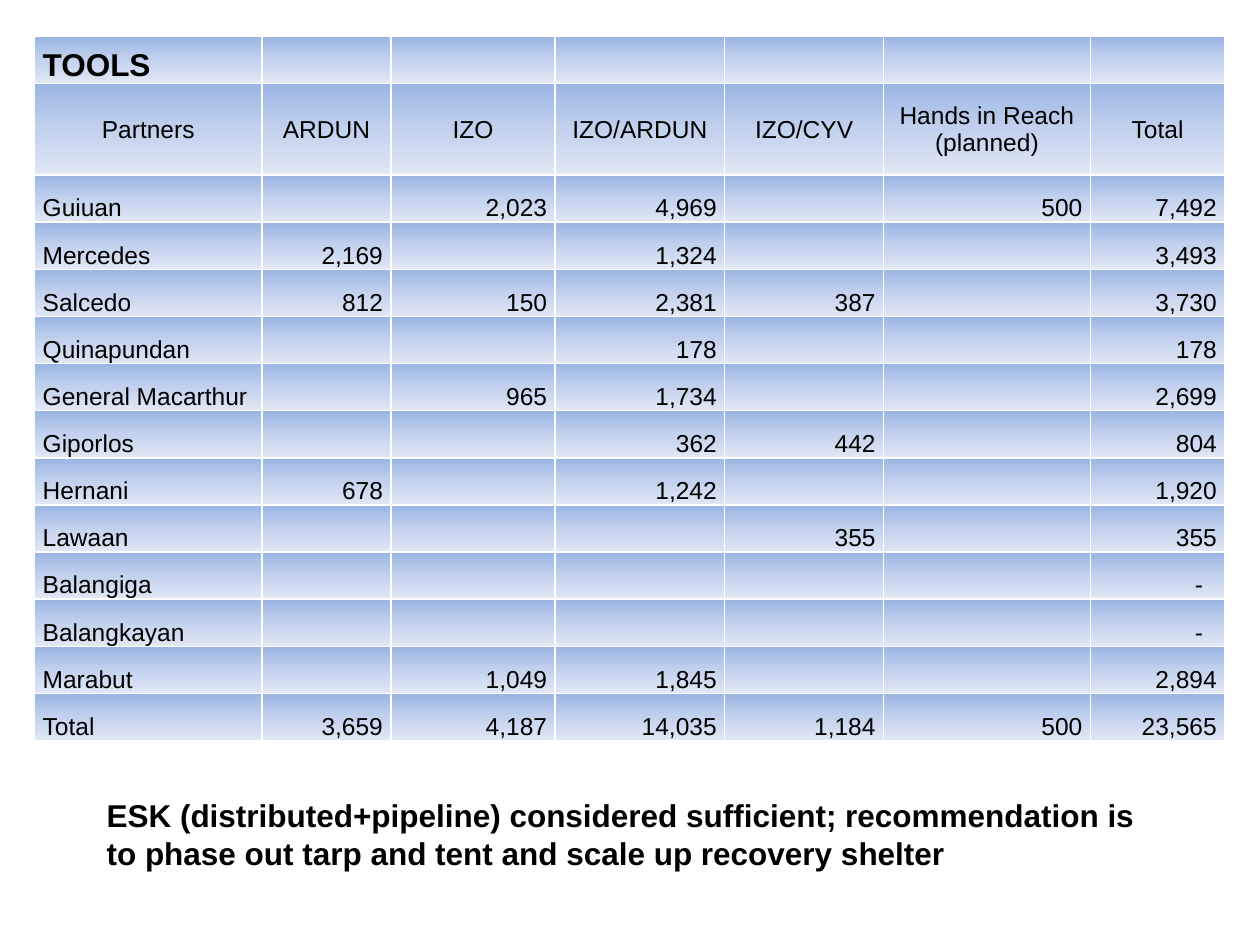
from pptx import Presentation, util as u
from pptx.dml.color import RGBColor
from pptx.enum import text
from pptx.oxml import parse_xml
from pptx.oxml.ns import nsdecls

COLOURS = {"text": "000000", "border": "FFFFFF",
           "top": "9AB5E4", "middle": "C2D1ED", "bottom": "E1E8F5"}
FONT = "Arial"
COLUMN_WIDTHS = [4.58, 2.6, 3.31, 3.42, 3.2, 4.17, 2.71]
ROW_HEIGHT, HEADER_HEIGHT = 0.95, 1.85
ROWS = [
    ["TOOLS", "", "", "", "", "", ""],
    ["Partners", "ARDUN", "IZO", "IZO/ARDUN", "IZO/CYV", "Hands in Reach (planned)", "Total"],
    ["Guiuan", "", "2,023", "4,969", "", "500", "7,492"],
    ["Mercedes", "2,169", "", "1,324", "", "", "3,493"],
    ["Salcedo", "812", "150", "2,381", "387", "", "3,730"],
    ["Quinapundan", "", "", "178", "", "", "178"],
    ["General Macarthur", "", "965", "1,734", "", "", "2,699"],
    ["Giporlos", "", "", "362", "442", "", "804"],
    ["Hernani", "678", "", "1,242", "", "", "1,920"],
    ["Lawaan", "", "", "", "355", "", "355"],
    ["Balangiga", "", "", "", "", "", "-"],
    ["Balangkayan", "", "", "", "", "", "-"],
    ["Marabut", "", "1,049", "1,845", "", "", "2,894"],
    ["Total", "3,659", "4,187", "14,035", "1,184", "500", "23,565"],
]
ADVICE = ("ESK (distributed+pipeline) considered sufficient; recommendation is "
          "to phase out tarp and tent and scale up recovery shelter")


def write(frame, words, size, bold=False, align=text.PP_ALIGN.LEFT):
    """Put one formatted paragraph into a text frame."""
    para = frame.paragraphs[0]
    para.text = words
    para.alignment = align
    for span in para.runs:
        span.font.name = FONT
        span.font.size = u.Pt(size)
        span.font.bold = bold
        span.font.color.rgb = RGBColor.from_string(COLOURS["text"])


def paint_cell(cell):
    """Give a cell white borders and a vertical blue gradient."""
    properties = cell._tc.get_or_add_tcPr()
    for side in "LRTB":
        properties.append(parse_xml(
            f'<a:ln{side} {nsdecls("a")} w="12700"><a:solidFill>'
            f'<a:srgbClr val="{COLOURS["border"]}"/></a:solidFill></a:ln{side}>'))
    stops = "".join(
        f'<a:gs pos="{place}"><a:srgbClr val="{COLOURS[name]}"/></a:gs>'
        for place, name in ((0, "top"), (50000, "middle"), (100000, "bottom")))
    properties.append(parse_xml(
        f'<a:gradFill {nsdecls("a")} rotWithShape="1"><a:gsLst>{stops}</a:gsLst>'
        '<a:lin ang="5400000" scaled="0"/></a:gradFill>'))


def fill_cell(cell, words, row, column):
    """Write and style one cell according to its place in the table."""
    header = row == 1
    cell.margin_left = u.Cm(0.16)
    cell.margin_right = u.Cm(0.44 if words == "-" else 0.16)
    cell.margin_top, cell.margin_bottom = u.Cm(0.02), 0
    cell.vertical_anchor = text.MSO_ANCHOR.MIDDLE if header else text.MSO_ANCHOR.BOTTOM
    if header:
        align = text.PP_ALIGN.CENTER
    else:
        align = text.PP_ALIGN.RIGHT if column else text.PP_ALIGN.LEFT
    title = row == 0
    write(cell.text_frame, words, 18 if title else 14, title, align)
    paint_cell(cell)


def add_tools_table(page):
    """Add the table of tools by municipality and partner."""
    heights = [HEADER_HEIGHT if row == 1 else ROW_HEIGHT for row in range(len(ROWS))]
    table = page.shapes.add_table(
        len(ROWS), len(COLUMN_WIDTHS), u.Cm(0.7), u.Cm(0.73),
        u.Cm(sum(COLUMN_WIDTHS)), u.Cm(sum(heights))).table
    table.first_row = table.horz_banding = False
    for column, width in zip(table.columns, COLUMN_WIDTHS):
        column.width = u.Cm(width)
    for row, (values, height) in enumerate(zip(ROWS, heights)):
        table.rows[row].height = u.Cm(height)
        for column, words in enumerate(values):
            fill_cell(table.cell(row, column), words, row, column)


def add_advice(page):
    """Add the bold recommendation below the table."""
    box = page.shapes.add_textbox(u.Cm(1.9), u.Cm(15.93), u.Cm(21.41), u.Cm(1.8))
    box.text_frame.word_wrap = True
    write(box.text_frame, ADVICE, 18, bold=True)


def main():
    """Build the slide and save the deck."""
    deck = Presentation()
    deck.slide_width, deck.slide_height = u.Cm(25.4), u.Cm(19.05)
    page = deck.slides.add_slide(deck.slide_layouts[6])
    add_tools_table(page)
    add_advice(page)
    deck.save("out.pptx")


if __name__ == "__main__":
    main()
